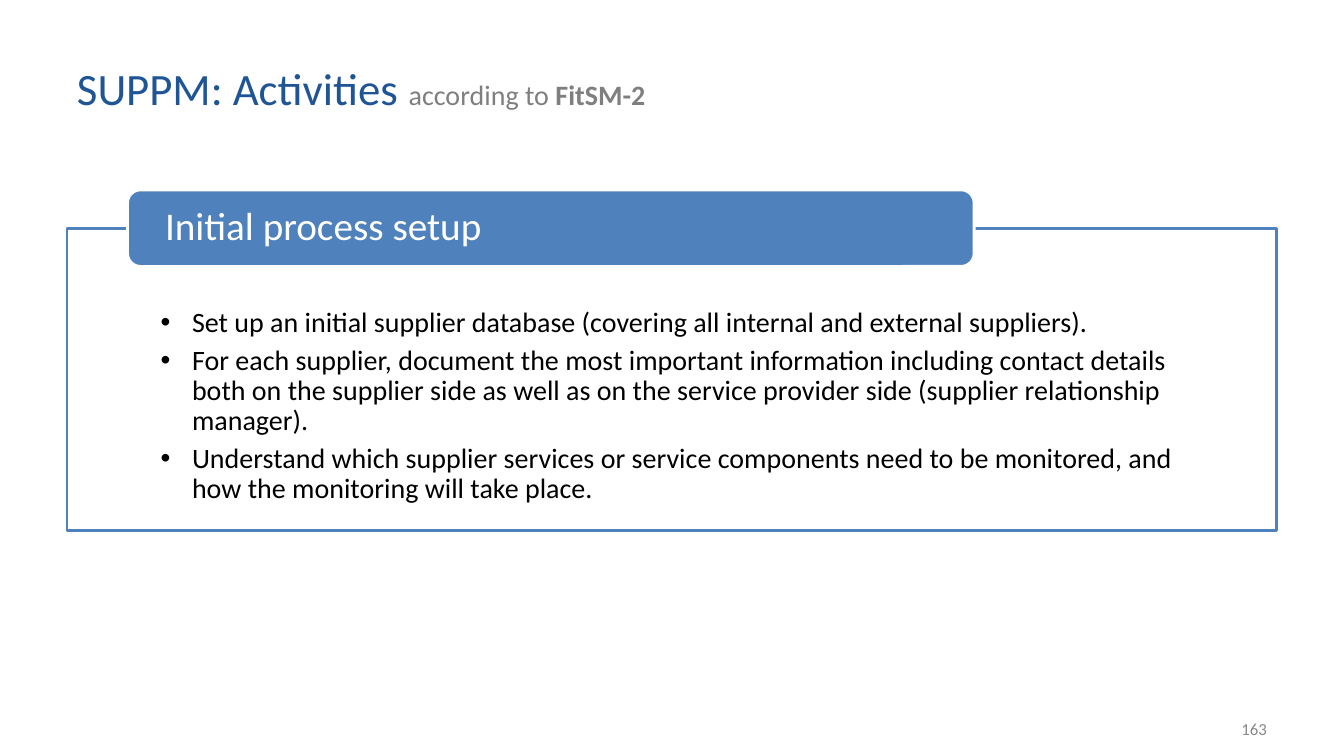
import pptx
import pptx.dml.color
import pptx.enum.shapes
import pptx.enum.text
import pptx.oxml
import pptx.oxml.ns
import pptx.util

Cm = pptx.util.Cm
Pt = pptx.util.Pt
Shape = pptx.enum.shapes.MSO_SHAPE
Align = pptx.enum.text.PP_ALIGN
Anchor = pptx.enum.text.MSO_ANCHOR

COLORS = {
    "title": "205595",
    "muted": "7F7F7F",
    "accent": "4F81BD",
    "white": "FFFFFF",
    "black": "000000",
    "number": "888888",
}
TASKS = [
    "Set up an initial supplier database (covering all internal and external suppliers).",
    "For each supplier, document the most important information including contact details "
    "both on the supplier side as well as on the service provider side "
    "(supplier relationship manager).",
    "Understand which supplier services or service components need to be monitored, "
    "and how the monitoring will take place.",
]


def tint(name):
    return pptx.dml.color.RGBColor.from_string(COLORS[name])


def style(run, size, color, bold=False):
    run.font.name = "Calibri"
    run.font.size = Pt(size)
    run.font.bold = bold
    run.font.color.rgb = tint(color)


def setup(frame, anchor, insets):
    frame.word_wrap = True
    frame.vertical_anchor = anchor
    left, top, right, bottom = map(Cm, insets)
    frame.margin_left, frame.margin_top = left, top
    frame.margin_right, frame.margin_bottom = right, bottom


def label(slide, box):
    frame = slide.shapes.add_textbox(*map(Cm, box)).text_frame
    setup(frame, Anchor.MIDDLE, (0.25, 0.13, 0.25, 0.13))
    return frame.paragraphs[0]


def panel(slide, kind, box, fill, line):
    shape = slide.shapes.add_shape(kind, *map(Cm, box))
    shape.shadow.inherit = False
    shape.fill.solid()
    shape.fill.fore_color.rgb = tint(fill)
    shape.line.color.rgb = tint(line)
    shape.line.width = Pt(2)
    return shape


def bullet(para):
    props = para._p.get_or_add_pPr()
    props.set("marL", str(Cm(0.79)))
    props.set("indent", str(Cm(-0.79)))
    space = pptx.oxml.ns.nsdecls("a")
    for xml in (
        f'<a:buClr {space}><a:srgbClr val="{COLORS["black"]}"/></a:buClr>',
        f'<a:buFont {space} typeface="Arial"/>',
        f'<a:buChar {space} char="•"/>',
    ):
        props.append(pptx.oxml.parse_xml(xml))


def heading(slide, box):
    para = label(slide, box)
    for text, size, color, bold in (
        ("SUPPM: Activities ", 32, "title", False),
        ("according to ", 20, "muted", False),
        ("FitSM-2", 20, "muted", True),
    ):
        run = para.add_run()
        run.text = text
        style(run, size, color, bold)


def tasks(slide, box):
    frame = panel(slide, Shape.RECTANGLE, box, "white", "accent").text_frame
    setup(frame, Anchor.TOP, (2.36, 2.03, 2.36, 0.69))
    frame.text = "\n".join(TASKS)
    for index, para in enumerate(frame.paragraphs):
        bullet(para)
        para.alignment = Align.LEFT
        para.line_spacing = 0.9
        if index:
            para.space_before = Pt(5.2)
        style(para.runs[0], 20, "black")


def tab(slide, box):
    left, top, width, height = box
    tall = 1.93
    place = (left + width * 0.05, top - tall / 2, width * 0.7, tall)
    shape = panel(slide, Shape.ROUNDED_RECTANGLE, place, "accent", "white")
    shape.adjustments[0] = 0.17
    setup(shape.text_frame, Anchor.MIDDLE, (0.85, 0, 0.85, 0))
    shape.text_frame.text = "Initial process setup"
    para = shape.text_frame.paragraphs[0]
    para.alignment = Align.LEFT
    para.line_spacing = 0.9
    style(para.runs[0], 28, "white")


def number(slide, box):
    para = label(slide, box)
    para.text = "163"
    para.alignment = Align.RIGHT
    style(para.runs[0], 12, "number")


def main():
    deck = pptx.Presentation()
    deck.slide_width, deck.slide_height = Cm(33.87), Cm(19.05)
    slide = deck.slides.add_slide(deck.slide_layouts[6])
    body = (1.69, 5.75, 30.48, 7.62)
    heading(slide, (1.69, 0.76, 25.17, 2.92))
    tasks(slide, body)
    tab(slide, body)
    number(slide, (24.28, 17.86, 7.9, 1.02))
    deck.save("out.pptx")


if __name__ == "__main__":
    main()
